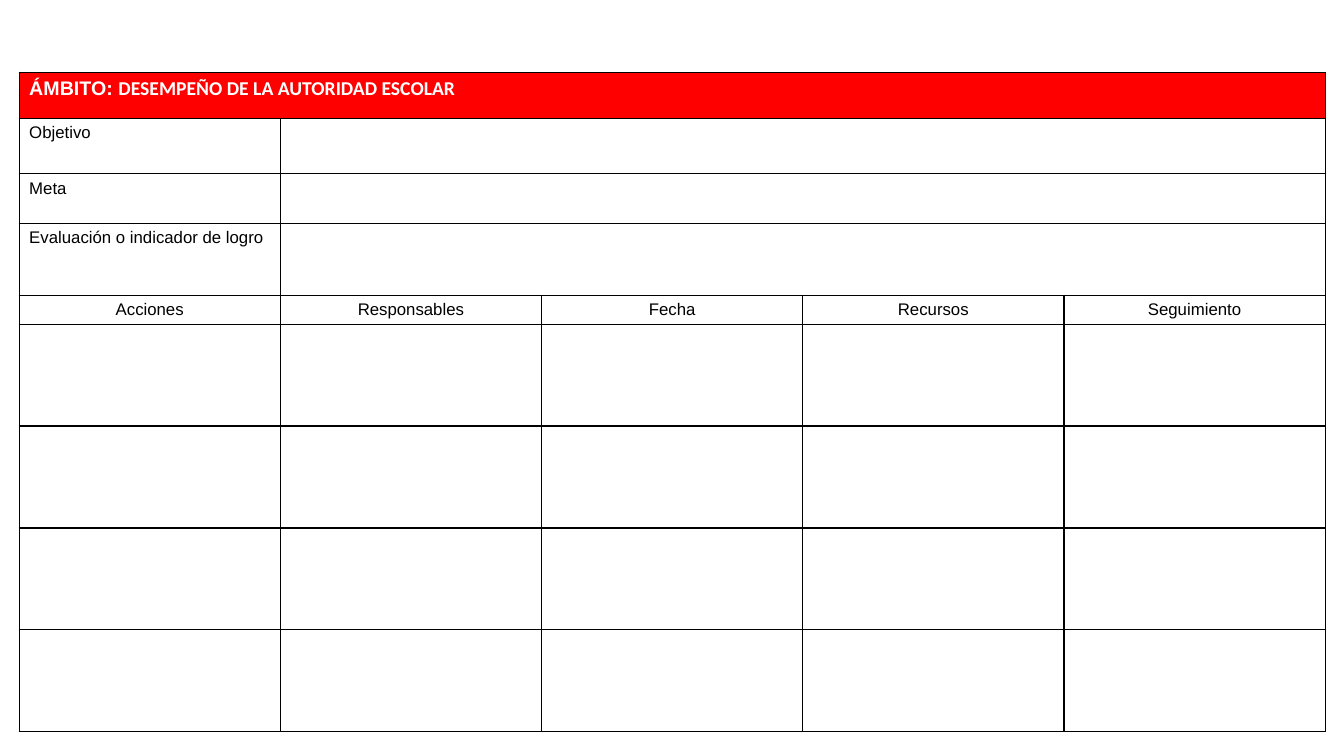
import pptx
import pptx.dml.color
import pptx.enum.text
import pptx.oxml
import pptx.oxml.ns
import pptx.util

Pt = pptx.util.Pt
COLUMN_WIDTH = 186.6
ROW_HEIGHTS = [33.1, 39.5, 35.5, 51.2, 20.6] + [72.8] * 4
SUMMARY_LABELS = ["Objetivo", "Meta", "Evaluación o indicador de logro"]
ACTION_HEADERS = ["Acciones", "Responsables", "Fecha", "Recursos", "Seguimiento"]


def rgb(value):
    return pptx.dml.color.RGBColor.from_string(value)


def add_run(cell, text, size=12, font="Arial", color="000000", bold=False):
    r = cell.text_frame.paragraphs[0].add_run()
    r.text = text
    r.font.size = Pt(size)
    r.font.name = font
    r.font.bold = bold
    r.font.color.rgb = rgb(color)


def set_borders(cell, color="000000", width=1):
    tc_pr = cell._tc.get_or_add_tcPr()
    for side in ("lnL", "lnR", "lnT", "lnB"):
        tc_pr.append(pptx.oxml.parse_xml(
            f'<a:{side} {pptx.oxml.ns.nsdecls("a")} w="{Pt(width)}">'
            f'<a:solidFill><a:srgbClr val="{color}"/></a:solidFill></a:{side}>'))


def set_fill(cell, color):
    cell.fill.solid()
    cell.fill.fore_color.rgb = rgb(color)


def add_grid(s, left, top):
    rows, cols = len(ROW_HEIGHTS), len(ACTION_HEADERS)
    table = s.shapes.add_table(rows, cols, Pt(left), Pt(top),
                               Pt(COLUMN_WIDTH * cols), Pt(sum(ROW_HEIGHTS))).table
    table.first_row = False
    table.horz_banding = False
    for column in table.columns:
        column.width = Pt(COLUMN_WIDTH)
    for row, height in zip(table.rows, ROW_HEIGHTS):
        row.height = Pt(height)
    for cell in table.iter_cells():
        set_borders(cell)
        set_fill(cell, "FFFFFF")
    return table


def fill_heading(table):
    cell = table.cell(0, 0)
    cell.merge(table.cell(0, len(ACTION_HEADERS) - 1))
    set_fill(cell, "FF0000")
    add_run(cell, "ÁMBITO: ", 14, "Arial", "FFFFFF", True)
    add_run(cell, "DESEMPEÑO DE LA AUTORIDAD ESCOLAR", 14, "Calibri", "FFFFFF", True)


def fill_summary(table):
    for row, label in enumerate(SUMMARY_LABELS, start=1):
        add_run(table.cell(row, 0), label)
        table.cell(row, 1).merge(table.cell(row, len(ACTION_HEADERS) - 1))


def fill_action_headers(table):
    for col, header in enumerate(ACTION_HEADERS):
        cell = table.cell(len(SUMMARY_LABELS) + 1, col)
        add_run(cell, header)
        cell.text_frame.paragraphs[0].alignment = pptx.enum.text.PP_ALIGN.CENTER


def main():
    prs = pptx.Presentation()
    prs.slide_width = Pt(960)
    prs.slide_height = Pt(540)
    s = prs.slides.add_slide(prs.slide_layouts[6])
    table = add_grid(s, 13.7, 51.6)
    fill_heading(table)
    fill_summary(table)
    fill_action_headers(table)
    prs.save("out.pptx")


if __name__ == "__main__":
    main()
